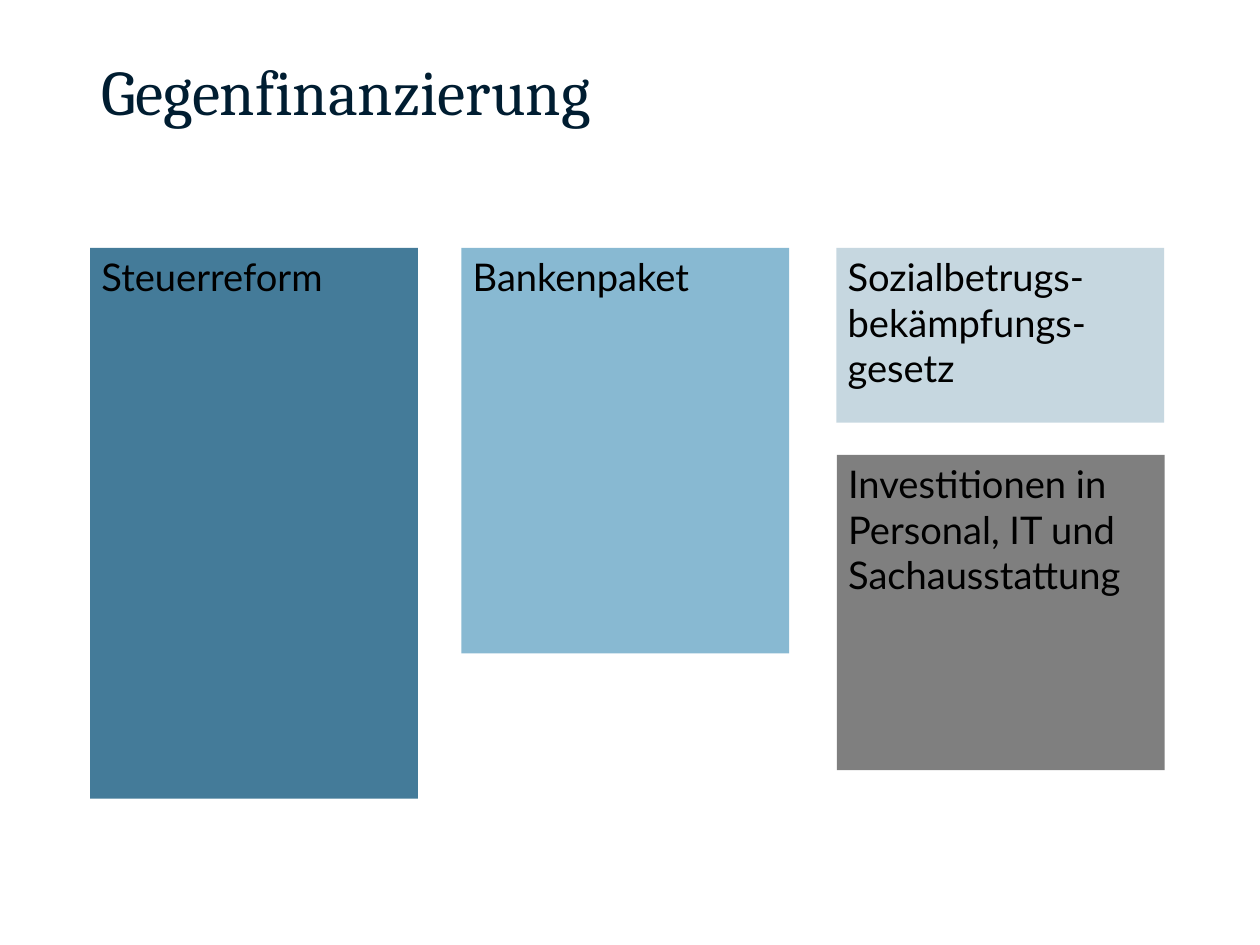
from dataclasses import dataclass

import pptx
import pptx.dml.color
import pptx.enum.shapes
import pptx.enum.text
import pptx.oxml
import pptx.oxml.ns
import pptx.presentation
import pptx.slide
import pptx.text.text
import pptx.util

Pt = pptx.util.Pt

COLORS = {"blue": "447B99", "sky": "88B9D2", "black": "000000", "navy": "001D31"}
LEFT, TOP, WIDTH = 56.9, 156.2, 206.6


@dataclass
class Card:
    text: str
    left: float
    top: float
    height: float
    color: str
    alpha: int = 100


CARDS = [
    Card("Steuerreform", LEFT, TOP, 347, "blue"),
    Card("Bankenpaket", 290.9, TOP, 255.6, "sky"),
    Card("Sozialbetrugs-bekämpfungs-gesetz", 527.2, TOP, 110.2, "blue", 30),
    Card("Investitionen in Personal, IT und Sachausstattung",
         527.5, 286.6, 198.7, "black", 50),
]


def get_rgb(name: str) -> pptx.dml.color.RGBColor:
    return pptx.dml.color.RGBColor.from_string(COLORS[name])


def write(frame: pptx.text.text.TextFrame, text: str, face: str,
          size: float, color: str, middle: bool = False) -> None:
    anchor = pptx.enum.text.MSO_ANCHOR
    frame.word_wrap = True
    frame.vertical_anchor = anchor.MIDDLE if middle else anchor.TOP
    line = frame.paragraphs[0]
    line.text = text
    line.alignment = pptx.enum.text.PP_ALIGN.LEFT
    line.font.name = face
    line.font.size = Pt(size)
    line.font.color.rgb = get_rgb(color)


def draw(slide: pptx.slide.Slide, card: Card) -> None:
    box = slide.shapes.add_shape(
        pptx.enum.shapes.MSO_SHAPE.RECTANGLE,
        Pt(card.left), Pt(card.top), Pt(WIDTH), Pt(card.height))
    box.shadow.inherit = False
    box.line.fill.background()
    box.fill.solid()
    box.fill.fore_color.rgb = get_rgb(card.color)
    # Transparency
    if card.alpha < 100:
        qn = pptx.oxml.ns.qn
        fill = box.fill._xPr.find(qn("a:solidFill"))
        tint = pptx.oxml.parse_xml(
            f'<a:alpha {pptx.oxml.ns.nsdecls("a")} val="{card.alpha * 1000}"/>')
        fill.find(qn("a:srgbClr")).append(tint)
    write(box.text_frame, card.text, "Lato", 24, "black")


def main() -> None:
    deck = pptx.Presentation()
    deck.slide_width, deck.slide_height = Pt(794.16), Pt(595.44)
    slide = deck.slides.add_slide(deck.slide_layouts[6])

    # Title
    title = slide.shapes.add_textbox(Pt(LEFT), Pt(28.1), Pt(516.2), Pt(56.9))
    write(title.text_frame, "Gegenfinanzierung", "Cambria", 40, "navy", middle=True)

    # Funding cards
    for card in CARDS:
        draw(slide, card)

    deck.save("out.pptx")


if __name__ == "__main__":
    main()
